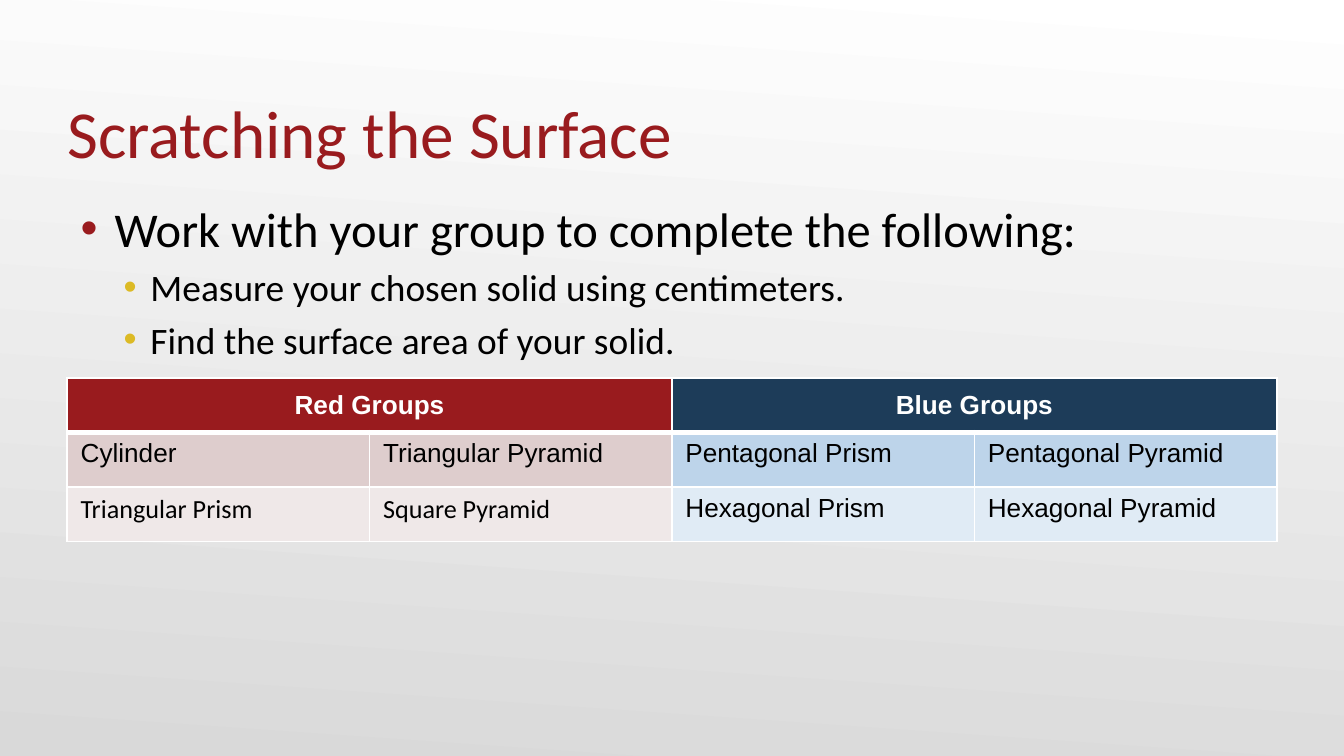
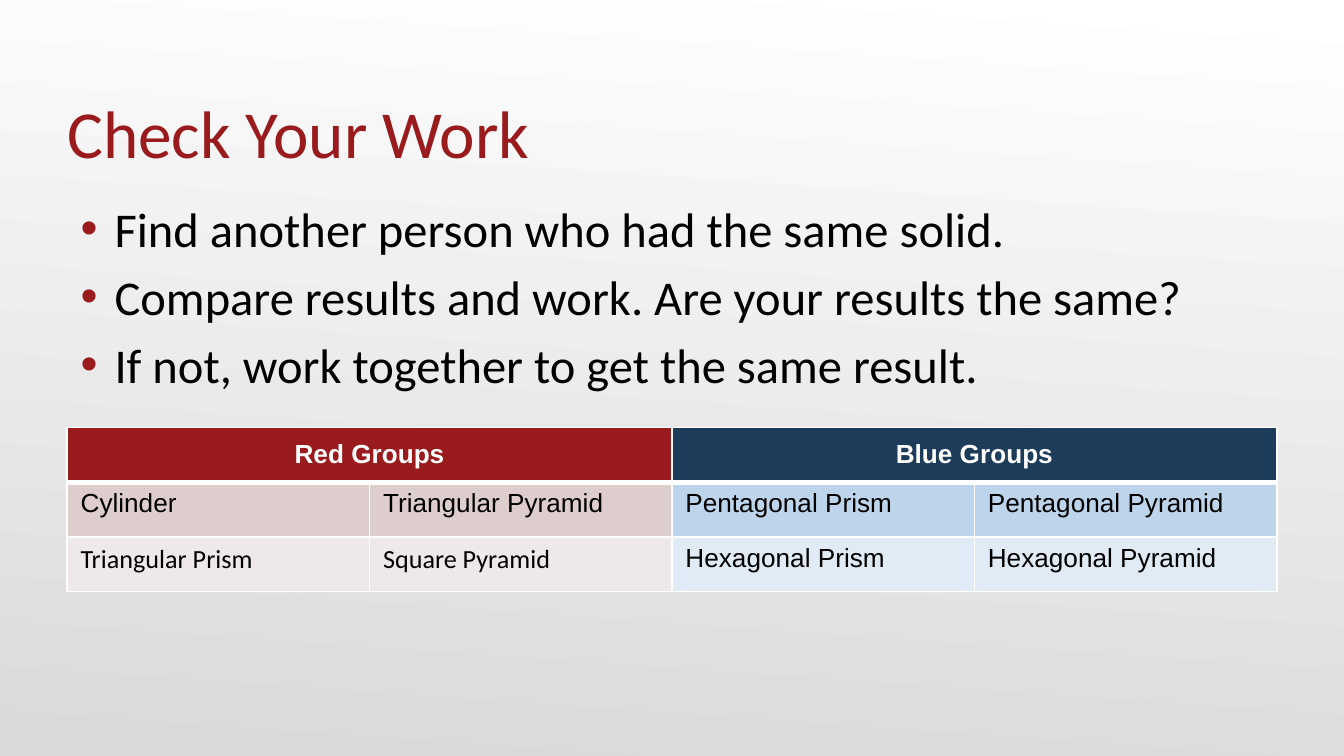
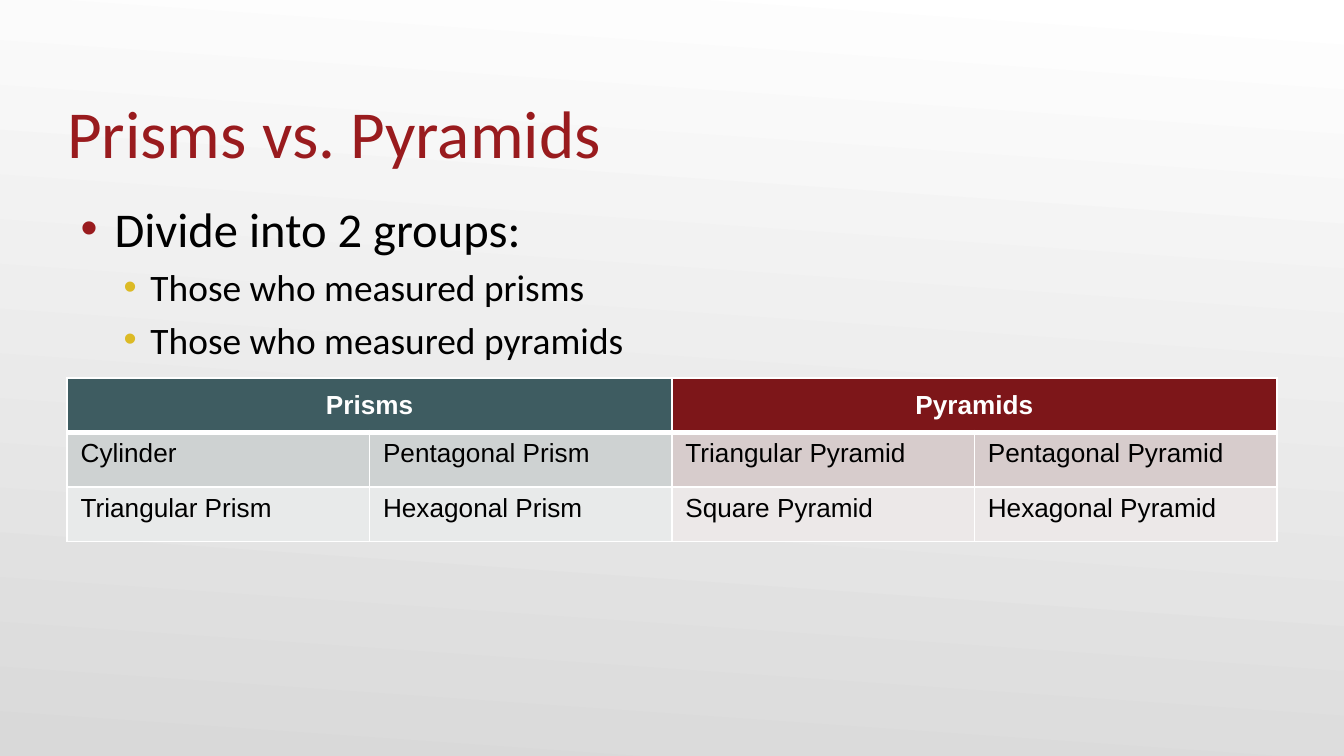
from dataclasses import dataclass

from lxml.etree import SubElement
from pptx import Presentation
from pptx.dml.color import RGBColor
from pptx.enum.text import MSO_ANCHOR as Anchor, MSO_AUTO_SIZE as AutoSize, PP_ALIGN as Align
from pptx.oxml.ns import qn
from pptx.util import Cm, Pt

# Colours
WHITE = RGBColor(0xFF, 0xFF, 0xFF)
BLACK = RGBColor(0x00, 0x00, 0x00)
GREY = RGBColor(0xD9, 0xD9, 0xD9)
RED = RGBColor(0x99, 0x1B, 0x1E)
GOLD = RGBColor(0xDC, 0xBA, 0x25)

# Fonts
HEAD_FONT = "Calibri"
TABLE_FONT = "Arial"


@dataclass
class Box:
    left: int
    top: int
    width: int
    height: int


@dataclass
class Palette:
    header: RGBColor
    bands: tuple


RED_GROUP = Palette(RED, (RGBColor(0xDE, 0xCD, 0xCD), RGBColor(0xEF, 0xE8, 0xE8)))
BLUE_GROUP = Palette(RGBColor(0x1D, 0x3C, 0x59),
                     (RGBColor(0xBD, 0xD4, 0xEA), RGBColor(0xE0, 0xEB, 0xF5)))
PRISM_GROUP = Palette(RGBColor(0x3E, 0x5C, 0x61),
                      (RGBColor(0xCE, 0xD2, 0xD2), RGBColor(0xE8, 0xEA, 0xEA)))
PYRAMID_GROUP = Palette(RGBColor(0x7D, 0x16, 0x19),
                        (RGBColor(0xD7, 0xCC, 0xCC), RGBColor(0xEC, 0xE8, 0xE8)))

# Shared layout
MARGIN = Cm(1.27)
CONTENT_WIDTH = Cm(22.86)
TITLE_BOX = Box(MARGIN, Cm(0.86), CONTENT_WIDTH, Cm(2.39))
BODY_TOP = Cm(3.63)
TABLE_HEIGHT = Cm(3.1)

# Bullet levels: colour, text size, left margin, hanging indent
LEVELS = (
    (RED, Pt(26), Cm(0.64), Cm(-0.64)),
    (GOLD, Pt(20), Cm(1.32), Cm(-0.51)),
)


@dataclass
class GroupTable:
    heading: str
    rows: tuple
    palette: Palette
    fonts: tuple = (TABLE_FONT, TABLE_FONT)


RED_TABLE = GroupTable(
    "Red Groups",
    (("Cylinder", "Triangular Pyramid"), ("Triangular Prism", "Square Pyramid")),
    RED_GROUP, (TABLE_FONT, HEAD_FONT))
BLUE_TABLE = GroupTable(
    "Blue Groups",
    (("Pentagonal Prism", "Pentagonal Pyramid"), ("Hexagonal Prism", "Hexagonal Pyramid")),
    BLUE_GROUP)
PRISM_TABLE = GroupTable(
    "Prisms",
    (("Cylinder", "Pentagonal Prism"), ("Triangular Prism", "Hexagonal Prism")),
    PRISM_GROUP)
PYRAMID_TABLE = GroupTable(
    "Pyramids",
    (("Triangular Pyramid", "Pentagonal Pyramid"), ("Square Pyramid", "Hexagonal Pyramid")),
    PYRAMID_GROUP)

# Title, body height, (level, text) items, tables from left to right
PAGES = (
    ("Scratching the Surface", Cm(3.51),
     ((0, "Work with your group to complete the following:"),
      (1, "Measure your chosen solid using centimeters."),
      (1, "Find the surface area of your solid.")),
     (RED_TABLE, BLUE_TABLE)),
    ("Check Your Work", Cm(4.45),
     ((0, "Find another person who had the same solid."),
      (0, "Compare results and work. Are your results the same?"),
      (0, "If not, work together to get the same result.")),
     (RED_TABLE, BLUE_TABLE)),
    ("Prisms vs. Pyramids", Cm(3.51),
     ((0, "Divide into 2 groups:"),
      (1, "Those who measured prisms"),
      (1, "Those who measured pyramids")),
     (PRISM_TABLE, PYRAMID_TABLE)),
)


def place(shape, box):
    shape.left, shape.top = box.left, box.top
    shape.width, shape.height = box.width, box.height


def style_font(font, name, size, color, bold=False):
    font.name, font.size, font.bold = name, size, bold
    font.color.rgb = color


def set_background(master):
    fill = master.background.fill
    fill.gradient()
    fill.gradient_angle = 266
    for stop, color in zip(fill.gradient_stops, (WHITE, GREY)):
        stop.color.rgb = color


def fill_title(title, text, box):
    place(title, box)
    frame = title.text_frame
    frame.text = text
    frame.word_wrap = True
    frame.auto_size = AutoSize.NONE
    frame.vertical_anchor = Anchor.BOTTOM
    frame.margin_left = frame.margin_right = frame.margin_bottom = 0
    para = frame.paragraphs[0]
    para.alignment = Align.LEFT
    style_font(para.runs[0].font, HEAD_FONT, Pt(36), RED)


def set_bullet(para, color, margin, indent):
    props = para._p.get_or_add_pPr()
    props.set("marL", str(margin))
    props.set("indent", str(indent))
    bullet_color = SubElement(props, qn("a:buClr"))
    SubElement(bullet_color, qn("a:srgbClr"), val=str(color))
    SubElement(props, qn("a:buFont"), typeface="Arial")
    SubElement(props, qn("a:buChar"), char="•")


def fill_body(body, items, box):
    place(body, box)
    frame = body.text_frame
    frame.text = "\n".join(text for _, text in items)
    frame.word_wrap = True
    frame.auto_size = AutoSize.NONE
    for para, (level, _) in zip(frame.paragraphs, items):
        color, size, margin, indent = LEVELS[level]
        para.level = level
        set_bullet(para, color, margin, indent)
        style_font(para.runs[0].font, HEAD_FONT, size, BLACK)
    frame.paragraphs[0].space_before = Pt(0)


def set_borders(cell, bottom):
    props = cell._tc.get_or_add_tcPr()
    for side, width in (("L", 1), ("R", 1), ("T", 1), ("B", bottom)):
        line = SubElement(props, qn(f"a:ln{side}"), w=str(Pt(width)))
        solid = SubElement(line, qn("a:solidFill"))
        SubElement(solid, qn("a:srgbClr"), val=str(WHITE))


def paint_cell(cell, fill, bottom=1):
    set_borders(cell, bottom)
    cell.fill.solid()
    cell.fill.fore_color.rgb = fill


def write_cell(cell, text, font, color, bold=False):
    cell.text = text
    style_font(cell.text_frame.paragraphs[0].runs[0].font, font, Pt(14), color, bold)


def add_group_table(page, group, box):
    table = page.shapes.add_table(3, 2, box.left, box.top, box.width, box.height).table
    table.horz_banding = False

    # Heading across both columns
    header = table.cell(0, 0)
    header.merge(table.cell(0, 1))
    for column in range(2):
        paint_cell(table.cell(0, column), group.palette.header, bottom=3)
    write_cell(header, group.heading, TABLE_FONT, WHITE, bold=True)
    header.vertical_anchor = Anchor.MIDDLE
    header.text_frame.paragraphs[0].alignment = Align.CENTER

    # Solids
    bands = zip(group.rows, group.palette.bands, group.fonts)
    for row, (names, fill, font) in enumerate(bands, 1):
        for column, name in enumerate(names):
            cell = table.cell(row, column)
            paint_cell(cell, fill)
            write_cell(cell, name, font, BLACK)


def add_page(deck, title, body_height, items, groups):
    page = deck.slides.add_slide(deck.slide_layouts[1])
    fill_title(page.shapes.title, title, TITLE_BOX)
    fill_body(page.placeholders[1], items, Box(MARGIN, BODY_TOP, CONTENT_WIDTH, body_height))
    width = CONTENT_WIDTH // len(groups)
    for index, group in enumerate(groups):
        box = Box(MARGIN + index * width, BODY_TOP + body_height, width, TABLE_HEIGHT)
        add_group_table(page, group, box)


def main():
    deck = Presentation()
    deck.slide_width, deck.slide_height = Cm(25.4), Cm(14.29)
    set_background(deck.slide_master)
    for content in PAGES:
        add_page(deck, *content)
    deck.save("out.pptx")


if __name__ == "__main__":
    main()
